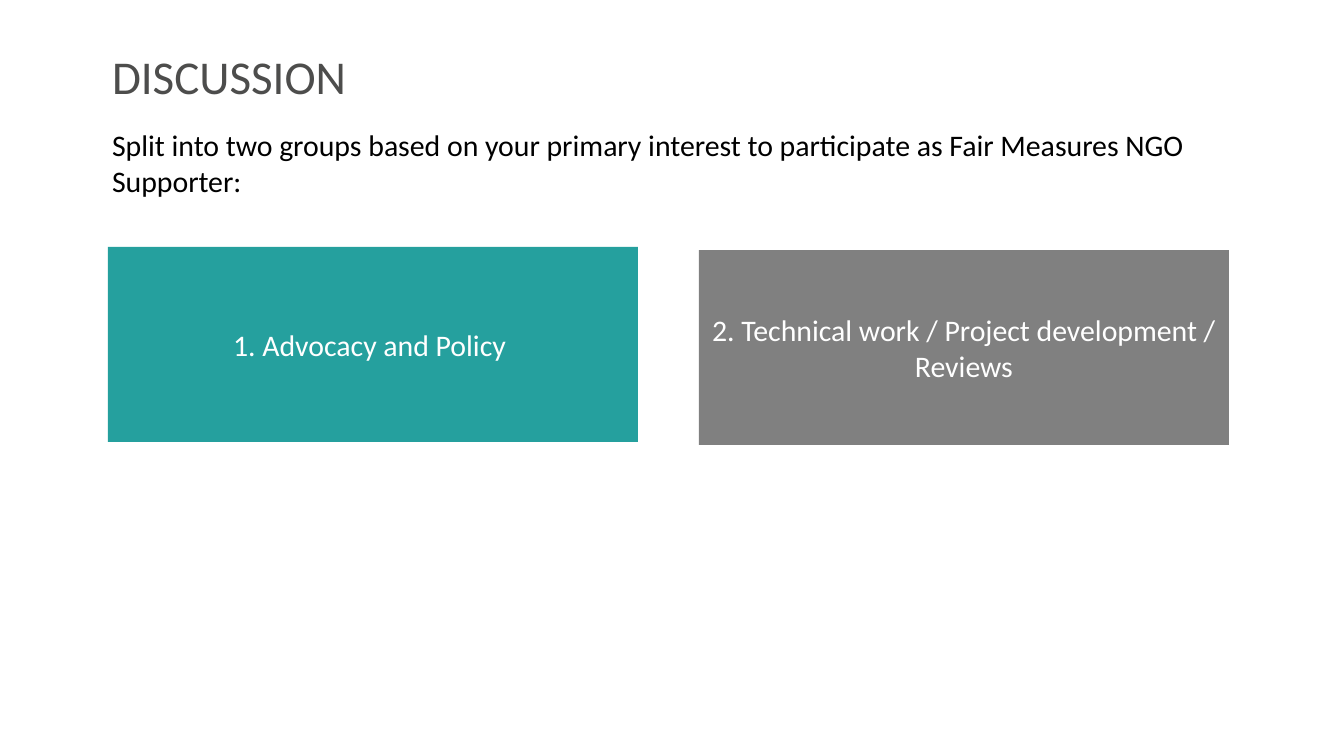
"""Build the discussion slide with its two group boxes."""
import dataclasses

import pptx
import pptx.dml.color
import pptx.enum.shapes
import pptx.enum.text
import pptx.util

SCALE = 914400 / 134.4
FONT = "Calibri"
HUES = {
    "title": "4D4D4C",
    "body": "000000",
    "label": "FFFFFF",
    "teal": "25A09E",
    "grey": "808080",
}
ALIGN = pptx.enum.text.PP_ALIGN
ANCHOR = pptx.enum.text.MSO_ANCHOR


@dataclasses.dataclass(frozen=True)
class Group:
    label: str
    left: int
    top: int
    fill: str
    width: int = 530
    height: int = 195


GROUPS = [
    Group("1. Advocacy and Policy ", 108, 247, "teal"),
    Group("2. Technical work / Project development / Reviews", 699, 250, "grey"),
]


def px(count: int) -> pptx.util.Emu:
    return pptx.util.Emu(round(count * SCALE))


def hue(name: str) -> pptx.dml.color.RGBColor:
    return pptx.dml.color.RGBColor.from_string(HUES[name])


def place(shape, left: int, top: int, width: int, height: int) -> None:
    shape.left, shape.top = px(left), px(top)
    shape.width, shape.height = px(width), px(height)


def write(shape, text: str, size: float, color: str, inset: int = 13,
          align=ALIGN.LEFT, anchor=ANCHOR.MIDDLE) -> None:
    frame = shape.text_frame
    frame.text = text
    frame.word_wrap = True
    frame.auto_size = pptx.enum.text.MSO_AUTO_SIZE.NONE
    frame.vertical_anchor = anchor
    frame.margin_left = frame.margin_right = px(inset)
    para = frame.paragraphs[0]
    para.alignment = align
    para.font.name = FONT
    para.font.size = pptx.util.Pt(size)
    para.font.color.rgb = hue(color)


def draw(slide, group: Group) -> None:
    box = slide.shapes.add_shape(
        pptx.enum.shapes.MSO_SHAPE.RECTANGLE,
        px(group.left), px(group.top), px(group.width), px(group.height))
    box.shadow.inherit = False
    box.fill.solid()
    box.fill.fore_color.rgb = hue(group.fill)
    box.line.fill.background()
    write(box, group.label, 16, "label", inset=6, align=ALIGN.CENTER)


def main() -> None:
    deck = pptx.Presentation()
    deck.slide_width, deck.slide_height = px(1344), px(756)
    slide = deck.slides.add_slide(deck.slide_layouts[5])

    title = slide.shapes.title
    place(title, 99, 46, 1232, 60)
    write(title, "DISCUSSION", 25.2, "title")

    intro = slide.shapes.add_textbox(px(99), px(120), px(1171), px(465))
    write(intro, "Split into two groups based on your primary interest to "
          "participate as Fair Measures NGO Supporter:", 16, "body",
          anchor=ANCHOR.TOP)

    for group in GROUPS:
        draw(slide, group)
    deck.save("out.pptx")


if __name__ == "__main__":
    main()
